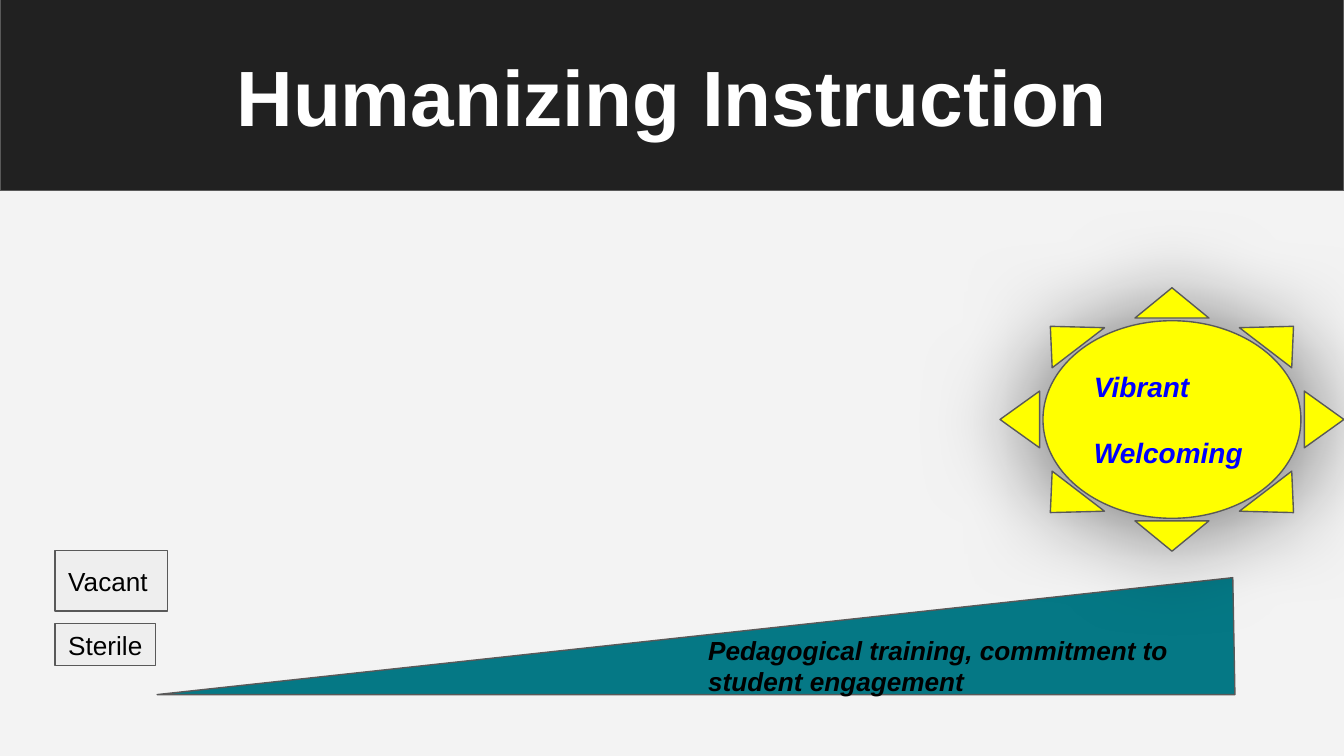
from lxml.etree import SubElement
from pptx import Presentation
from pptx.dml.color import RGBColor
from pptx.enum.shapes import MSO_SHAPE as Form
from pptx.enum.text import MSO_ANCHOR as Anchor, PP_ALIGN as Align
from pptx.oxml.ns import qn
from pptx.util import Cm, Pt

# left, top, width, height in cm
SIZE = (25.4, 14.29)
TITLE = ("Humanizing Instruction", (0, 0.66, 25.4, 2.21))
BAND = (0, -0.18, 25.4, 3.78)
RAMP = ("Pedagogical training, commitment to student engagement",
        (2.97, 10.92, 20.37, 2.21))
LABELS = [("Sterile", (1.04, 11.79, 1.9, 0.79)),
          ("Vacant", (1.04, 10.41, 2.13, 1.14))]
SUN = (["Vibrant", "Welcoming"], (18.9, 5.44, 6.5, 4.98))


def color(code):
    return RGBColor.from_string(code)


def draw(slide, form, box, fill, adj=None):
    shape = slide.shapes.add_shape(form, *map(Cm, box))
    shape.shadow.inherit = False
    shape.fill.solid()
    shape.fill.fore_color.rgb = color(fill)
    shape.line.color.rgb = color("595959")
    shape.line.width = Pt(0.75)
    if adj is not None:
        shape.adjustments[0] = adj
    return shape


def write(shape, *lines, size=14, ink="000000", bold=False, slant=False,
          align=Align.LEFT, anchor=Anchor.MIDDLE, gap=0, right=0.25):
    frame = shape.text_frame
    frame.word_wrap = True
    frame.vertical_anchor = anchor
    frame.margin_left = frame.margin_top = frame.margin_bottom = Cm(0.25)
    frame.margin_right = Cm(right)
    for i, line in enumerate(lines):
        para = frame.add_paragraph() if i else frame.paragraphs[0]
        para.alignment = align
        para.space_before = Pt(gap if i else 0)
        run = para.add_run()
        run.text = line
        font = run.font
        font.name, font.size = "Arial", Pt(size)
        font.bold, font.italic = bold, slant
        font.color.rgb = color(ink)


def shade(shape, blur, dist, alpha):
    """Give the shape a soft black shadow that falls straight down."""
    effects = shape._element.spPr.find(qn("a:effectLst"))
    outer = SubElement(effects, qn("a:outerShdw"), blurRad=str(Pt(blur)),
                       dist=str(Pt(dist)), dir="5400000", algn="bl",
                       rotWithShape="0")
    tone = SubElement(outer, qn("a:srgbClr"), val="000000")
    SubElement(tone, qn("a:alpha"), val=str(alpha * 1000))


def main():
    deck = Presentation()
    deck.slide_width, deck.slide_height = map(Cm, SIZE)
    slide = deck.slides.add_slide(deck.slide_layouts[6])
    back = slide.background.fill
    back.solid()
    back.fore_color.rgb = color("F3F3F3")

    draw(slide, Form.RECTANGLE, BAND, "212121")
    text, box = TITLE
    write(slide.shapes.add_textbox(*map(Cm, box)), text, size=42,
          ink="FFFFFF", bold=True, align=Align.CENTER, anchor=Anchor.TOP)

    text, box = RAMP
    ramp = draw(slide, Form.ISOSCELES_TRIANGLE, box, "057885", adj=0.998)
    write(ramp, text, bold=True, slant=True)

    for text, box in LABELS:
        write(draw(slide, Form.RECTANGLE, box, "EEEEEE"), text, right=0)

    lines, box = SUN
    sun = draw(slide, Form.SUN, box, "FFFF00", adj=0.125)
    shade(sun, blur=48.4, dist=1.5, alpha=50)
    write(sun, *lines, size=15, ink="0000FF", bold=True, slant=True, gap=17.5)

    deck.save("out.pptx")


if __name__ == "__main__":
    main()
